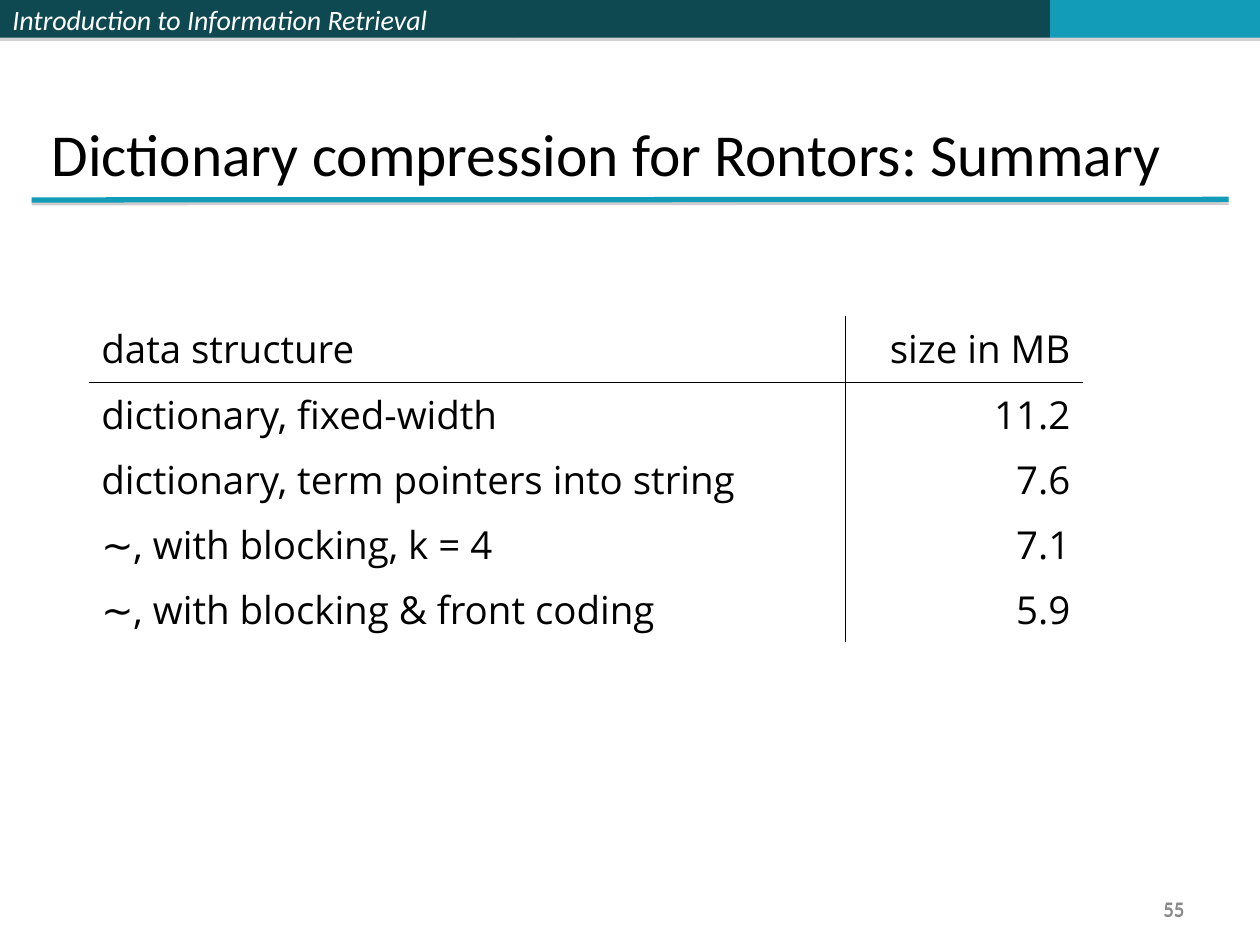
from dataclasses import dataclass

from lxml.etree import SubElement
from pptx import Presentation
from pptx.dml.color import RGBColor
from pptx.enum.shapes import MSO_CONNECTOR, MSO_SHAPE
from pptx.enum.text import MSO_ANCHOR, PP_ALIGN
from pptx.oxml.ns import qn
from pptx.util import Cm, Pt


@dataclass(frozen=True)
class Theme:
    dark: str = "0E4851"
    accent: str = "139CB7"
    shadow: str = "808080"
    paper: str = "FFFFFF"
    ink: str = "000000"
    muted: str = "898989"
    heading_font: str = "Calibri"
    table_font: str = "Open Sans"
    course_size: float = 16
    title_size: float = 34
    table_size: float = 22
    page_size: float = 12
    rule_width: float = 3
    inner_border: float = 0.25
    outer_border: float = 1


THEME = Theme()


@dataclass(frozen=True)
class Box:
    left: float
    top: float
    width: float
    height: float

    def lengths(self) -> list:
        return [Cm(v) for v in (self.left, self.top, self.width, self.height)]


@dataclass(frozen=True)
class Bar:
    box: Box
    color: str
    label: str = ""


@dataclass(frozen=True)
class Label:
    box: Box
    text: str
    size: float
    color: str
    anchor: MSO_ANCHOR
    align: PP_ALIGN = PP_ALIGN.LEFT


@dataclass(frozen=True)
class Column:
    width: float
    align: PP_ALIGN
    heading: str
    entries: tuple


BAR_HEIGHT = 0.76
BARS = (
    Bar(Box(0, 0, 10.36, BAR_HEIGHT), THEME.dark, "Introduction to Information Retrieval"),
    Bar(Box(10.36, 0, 10.81, BAR_HEIGHT), THEME.dark),
    Bar(Box(21.17, 0, 4.23, BAR_HEIGHT), THEME.accent),
)
PAGE_BOXES = (Box(18.21, 17.98, 5.92, 0.69), Box(18.21, 17.93, 5.92, 0.76))
LABELS = (
    Label(Box(0.79, 0.03, 24, 3.89), "Dictionary compression for Rontors: Summary",
          THEME.title_size, THEME.ink, MSO_ANCHOR.BOTTOM),
    *(Label(box, "55", THEME.page_size, THEME.muted, MSO_ANCHOR.MIDDLE, PP_ALIGN.RIGHT)
      for box in PAGE_BOXES),
)
ROW_HEIGHTS = (1.33, 5.24)
COLUMNS = (
    Column(15.24, PP_ALIGN.LEFT, "data structure",
           ("dictionary, fixed-width", "dictionary, term pointers into string",
            "∼, with blocking, k = 4", "∼, with blocking & front coding")),
    Column(4.8, PP_ALIGN.RIGHT, "size in MB", ("11.2", "7.6", "7.1", "5.9")),
)
TABLE_BOX = Box(1.79, 6.38, sum(column.width for column in COLUMNS), sum(ROW_HEIGHTS))


def apply(target, values: dict) -> None:
    for name, value in values.items():
        setattr(target, name, value)


def write(frame, lines: tuple, size: float, color: str, font: str = THEME.heading_font,
          align: PP_ALIGN = PP_ALIGN.LEFT, space: float = 0, italic: bool = False) -> None:
    """Fill a text frame with one paragraph per line."""
    for number, line in enumerate(lines):
        paragraph = frame.add_paragraph() if number else frame.paragraphs[0]
        apply(paragraph, {"alignment": align, "space_before": Pt(space)})
        run = paragraph.add_run()
        run.text = line
        apply(run.font, {"name": font, "size": Pt(size), "italic": italic})
        run.font.color.rgb = RGBColor.from_string(color)


def add_color(parent, color: str, opacity: int = 100) -> None:
    rgb = SubElement(parent, qn("a:srgbClr"), val=color)
    if opacity < 100:
        SubElement(rgb, qn("a:alpha"), val=str(opacity * 1000))


def cast_shadow(properties, distance: float, opacity: int) -> None:
    """Add a sharp shadow straight below; the line must already be set."""
    effects = SubElement(properties, qn("a:effectLst"))
    shadow = SubElement(effects, qn("a:outerShdw"), blurRad="0", dist=str(Pt(distance)),
                        dir="5400000", rotWithShape="0")
    add_color(shadow, THEME.shadow, opacity)


def draw_bar(shapes, bar: Bar) -> None:
    shape = shapes.add_shape(MSO_SHAPE.RECTANGLE, *bar.box.lengths())
    shape.fill.solid()
    shape.fill.fore_color.rgb = RGBColor.from_string(bar.color)
    shape.line.fill.background()
    cast_shadow(shape._element.spPr, 1.8, 35)
    if bar.label:
        apply(shape.text_frame, {"word_wrap": True, "vertical_anchor": MSO_ANCHOR.MIDDLE})
        write(shape.text_frame, (bar.label,), THEME.course_size, THEME.paper, italic=True)


def draw_title_rule(shapes) -> None:
    rule = shapes.add_connector(MSO_CONNECTOR.STRAIGHT, Cm(0.64), Cm(4.03), Cm(24.77), Cm(4.02))
    rule.line.color.rgb = RGBColor.from_string(THEME.accent)
    rule.line.width = Pt(THEME.rule_width)
    cast_shadow(rule._element.spPr, 1.6, 38)


def draw_label(shapes, label: Label) -> None:
    frame = shapes.add_textbox(*label.box.lengths()).text_frame
    apply(frame, {"word_wrap": True, "vertical_anchor": label.anchor})
    write(frame, (label.text,), label.size, label.color, align=label.align)


def set_borders(cell, row: int, column: int) -> None:
    """Black between cells, white above and below the table, none at its sides."""
    inner = (THEME.ink, THEME.inner_border)
    outer = (THEME.paper, THEME.outer_border)
    edges = {
        "a:lnL": inner if column else None,
        "a:lnR": inner if column < len(COLUMNS) - 1 else None,
        "a:lnT": inner if row else outer,
        "a:lnB": inner if row < len(ROW_HEIGHTS) - 1 else outer,
    }
    properties = cell._tc.get_or_add_tcPr()
    for tag, border in edges.items():
        edge = SubElement(properties, qn(tag))
        if border:
            color, width = border
            edge.set("w", str(Pt(width)))
            add_color(SubElement(edge, qn("a:solidFill")), color)
        else:
            SubElement(edge, qn("a:noFill"))


def draw_size_table(shapes) -> None:
    table = shapes.add_table(len(ROW_HEIGHTS), len(COLUMNS), *TABLE_BOX.lengths()).table
    apply(table, {"first_row": False, "horz_banding": False})
    for row, height in enumerate(ROW_HEIGHTS):
        table.rows[row].height = Cm(height)
    for number, column in enumerate(COLUMNS):
        table.columns[number].width = Cm(column.width)
        for row, (lines, space) in enumerate((((column.heading,), 0), (column.entries, 7))):
            cell = table.cell(row, number)
            write(cell.text_frame, lines, THEME.table_size, THEME.ink,
                  THEME.table_font, column.align, space)
            set_borders(cell, row, number)
            if row:
                fill = SubElement(cell._tc.tcPr, qn("a:solidFill"))
                add_color(fill, THEME.paper, 20)
            else:
                cell.fill.background()


def main() -> None:
    deck = Presentation()
    apply(deck, {"slide_width": Cm(25.4), "slide_height": Cm(19.05)})
    shapes = deck.slides.add_slide(deck.slide_layouts[6]).shapes
    for bar in BARS:
        draw_bar(shapes, bar)
    draw_title_rule(shapes)
    for label in LABELS:
        draw_label(shapes, label)
    draw_size_table(shapes)
    deck.save("out.pptx")


if __name__ == "__main__":
    main()
